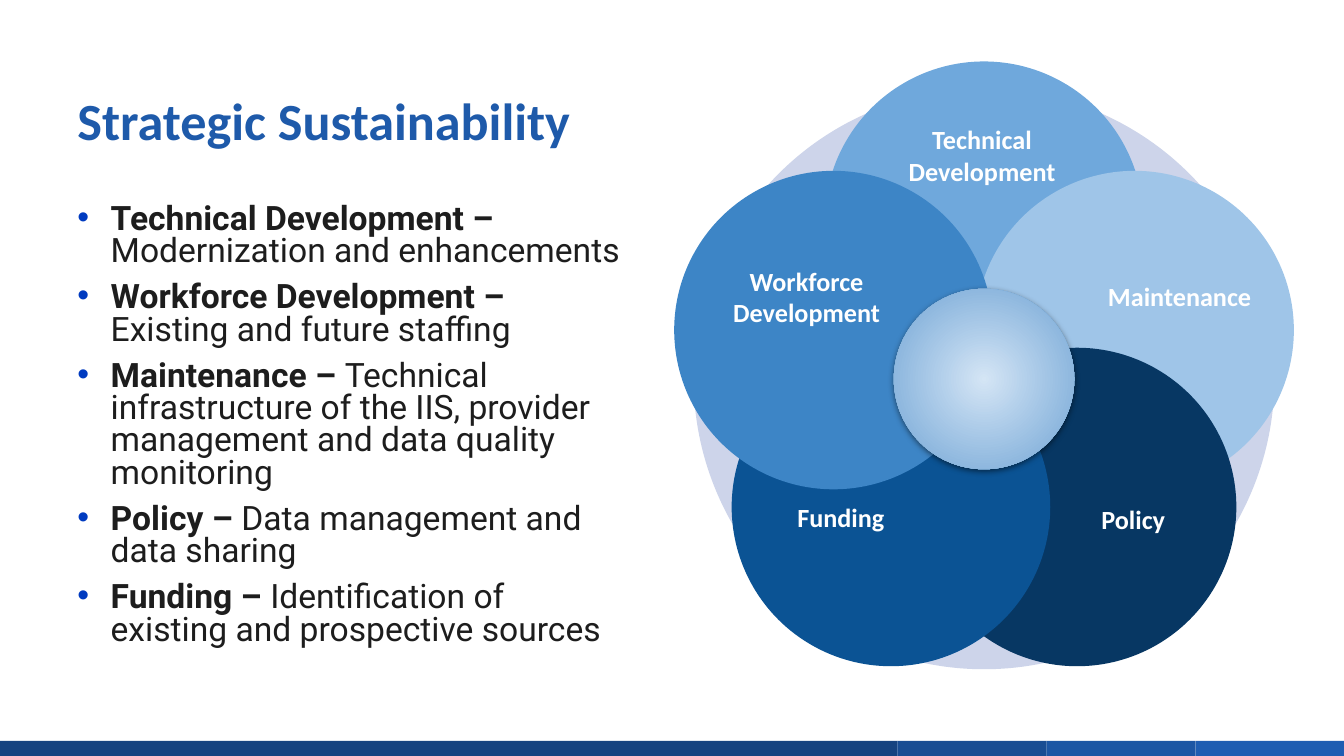
import math

from lxml import etree
from pptx import Presentation
from pptx import util as u
from pptx.dml.color import RGBColor
from pptx.enum import shapes, text
from pptx.oxml import parse_xml
from pptx.oxml.ns import nsdecls, qn

COLORS = {
    "title": "1E5AAA", "body": "1D1D1D", "bullet": "003BC0", "label": "FFFFFF",
    "ring": "CDD4EA", "hub_inner": "D4E5F5", "hub_outer": "70A4D5",
    "technical": "6FA8DC", "maintenance": "9FC5E8", "policy": "073763",
    "funding": "0B5394", "workforce": "3D85C6",
    "bar_1": "164380", "bar_2": "194D93", "bar_3": "1C56A4", "bar_4": "1E5DB2",
}
BULLETS = [
    ("Technical Development – ", "Modernization and enhancements"),
    ("Workforce Development – ", "Existing and future staffing"),
    ("Maintenance – ", "Technical infrastructure of the IIS, provider management "
                       "and data quality monitoring"),
    ("Policy – ", "Data management and data sharing"),
    ("Funding – ", "Identification of existing and prospective sources"),
]
# Clockwise from the top: label, colour, label left, top and width
PETALS = [
    ("Technical Development", "technical", 8.77, 1.06, 1.94),
    ("Maintenance", "maintenance", 10.83, 2.46, 1.74),
    ("Policy", "policy", 10.27, 4.67, 1.94),
    ("Funding", "funding", 7.37, 4.65, 1.94),
    ("Workforce Development", "workforce", 7.03, 2.46, 1.94),
]
CENTER_X, CENTER_Y = 9.76, 3.76
ORBIT = 1.57
PETAL_SIZE, RING_SIZE, HUB_SIZE = 3.16, 5.76, 1.79


def add_filled(slide, kind, left, top, width, height, color):
    shape = slide.shapes.add_shape(
        kind, u.Inches(left), u.Inches(top), u.Inches(width), u.Inches(height))
    shape.shadow.inherit = False
    shape.fill.solid()
    shape.fill.fore_color.rgb = RGBColor.from_string(COLORS[color])
    shape.line.fill.background()
    return shape


def add_circle(slide, center_x, center_y, size, color):
    return add_filled(slide, shapes.MSO_SHAPE.OVAL, center_x - size / 2,
                      center_y - size / 2, size, size, color)


def add_text_box(slide, left, top, width, height, anchor):
    box = slide.shapes.add_textbox(
        u.Inches(left), u.Inches(top), u.Inches(width), u.Inches(height))
    frame = box.text_frame
    frame.word_wrap = True
    frame.vertical_anchor = anchor
    return frame


def format_run(run, font, size, color, bold=True):
    run.font.name = font
    run.font.size = u.Pt(size)
    run.font.bold = bold
    run.font.color.rgb = RGBColor.from_string(COLORS[color])


def add_title(slide, title):
    frame = add_text_box(slide, 0.67, 0.3, 12, 1.25, text.MSO_ANCHOR.BOTTOM)
    frame.text = title
    paragraph = frame.paragraphs[0]
    paragraph.line_spacing = u.Pt(40)
    format_run(paragraph.runs[0], "Calibri", 37.3, "title")


def set_bullet(paragraph):
    properties = paragraph._p.get_or_add_pPr()
    properties.set("marL", str(u.Inches(0.33)))
    properties.set("indent", str(-u.Inches(0.33)))
    bullet_color = etree.SubElement(properties, qn("a:buClr"))
    etree.SubElement(bullet_color, qn("a:srgbClr"), val=COLORS["bullet"])
    etree.SubElement(properties, qn("a:buFont"), typeface="Arial")
    etree.SubElement(properties, qn("a:buChar"), char="•")


def add_bullets(slide):
    frame = add_text_box(slide, 0.67, 1.98, 5.67, 4.84, text.MSO_ANCHOR.TOP)
    for index, (topic, detail) in enumerate(BULLETS):
        paragraph = frame.add_paragraph() if index else frame.paragraphs[0]
        paragraph.line_spacing = 0.8
        paragraph.space_before = u.Pt(10)
        set_bullet(paragraph)
        for words, bold in ((topic, True), (detail, False)):
            run = paragraph.add_run()
            run.text = words
            format_run(run, "Roboto", 24, "body", bold)


def add_petal(slide, index, label, color, left, top, width):
    """Place one circle on the orbit, with its label."""
    angle = math.tau * index / len(PETALS)
    add_circle(slide, CENTER_X + ORBIT * math.sin(angle),
               CENTER_Y - ORBIT * math.cos(angle), PETAL_SIZE, color)
    frame = add_text_box(slide, left, top, width, 0.96, text.MSO_ANCHOR.MIDDLE)
    frame.margin_left = frame.margin_right = u.Inches(0.13)
    frame.margin_top = frame.margin_bottom = u.Inches(0.13)
    frame.text = label
    paragraph = frame.paragraphs[0]
    paragraph.alignment = text.PP_ALIGN.CENTER
    format_run(paragraph.runs[0], "Calibri", 18.7, "label")


def add_hub(slide):
    """Add the central circle with a radial gradient and a soft shadow."""
    hub = add_circle(slide, CENTER_X, CENTER_Y, HUB_SIZE, "hub_outer")
    properties = hub._element.spPr
    gradient = parse_xml(
        f'<a:gradFill {nsdecls("a")}><a:gsLst>'
        f'<a:gs pos="0"><a:srgbClr val="{COLORS["hub_inner"]}"/></a:gs>'
        f'<a:gs pos="100000"><a:srgbClr val="{COLORS["hub_outer"]}"/></a:gs>'
        '</a:gsLst><a:path path="circle">'
        '<a:fillToRect l="50000" t="50000" r="50000" b="50000"/>'
        '</a:path></a:gradFill>')
    properties.replace(properties.find(qn("a:solidFill")), gradient)
    properties.find(qn("a:effectLst")).append(parse_xml(
        f'<a:outerShdw {nsdecls("a")} blurRad="{u.Pt(4.5)}" dist="{u.Pt(1.5)}" '
        'dir="5400000" algn="bl" rotWithShape="0">'
        '<a:srgbClr val="000000"><a:alpha val="49000"/></a:srgbClr></a:outerShdw>'))


def add_footer_bars(slide):
    left = 0
    for number, width in enumerate((8.9, 1.48, 1.48, 1.48), start=1):
        add_filled(slide, shapes.MSO_SHAPE.RECTANGLE, left, 7.35, width, 0.16,
                   f"bar_{number}")
        left += width


def main():
    presentation = Presentation()
    presentation.slide_width = u.Inches(13.33)
    presentation.slide_height = u.Inches(7.5)
    slide = presentation.slides.add_slide(presentation.slide_layouts[6])
    add_footer_bars(slide)
    add_title(slide, "Strategic Sustainability")
    add_bullets(slide)
    add_circle(slide, CENTER_X, CENTER_Y, RING_SIZE, "ring")
    for index, petal in enumerate(PETALS):
        add_petal(slide, index, *petal)
    add_hub(slide)
    presentation.save("out.pptx")


if __name__ == "__main__":
    main()
